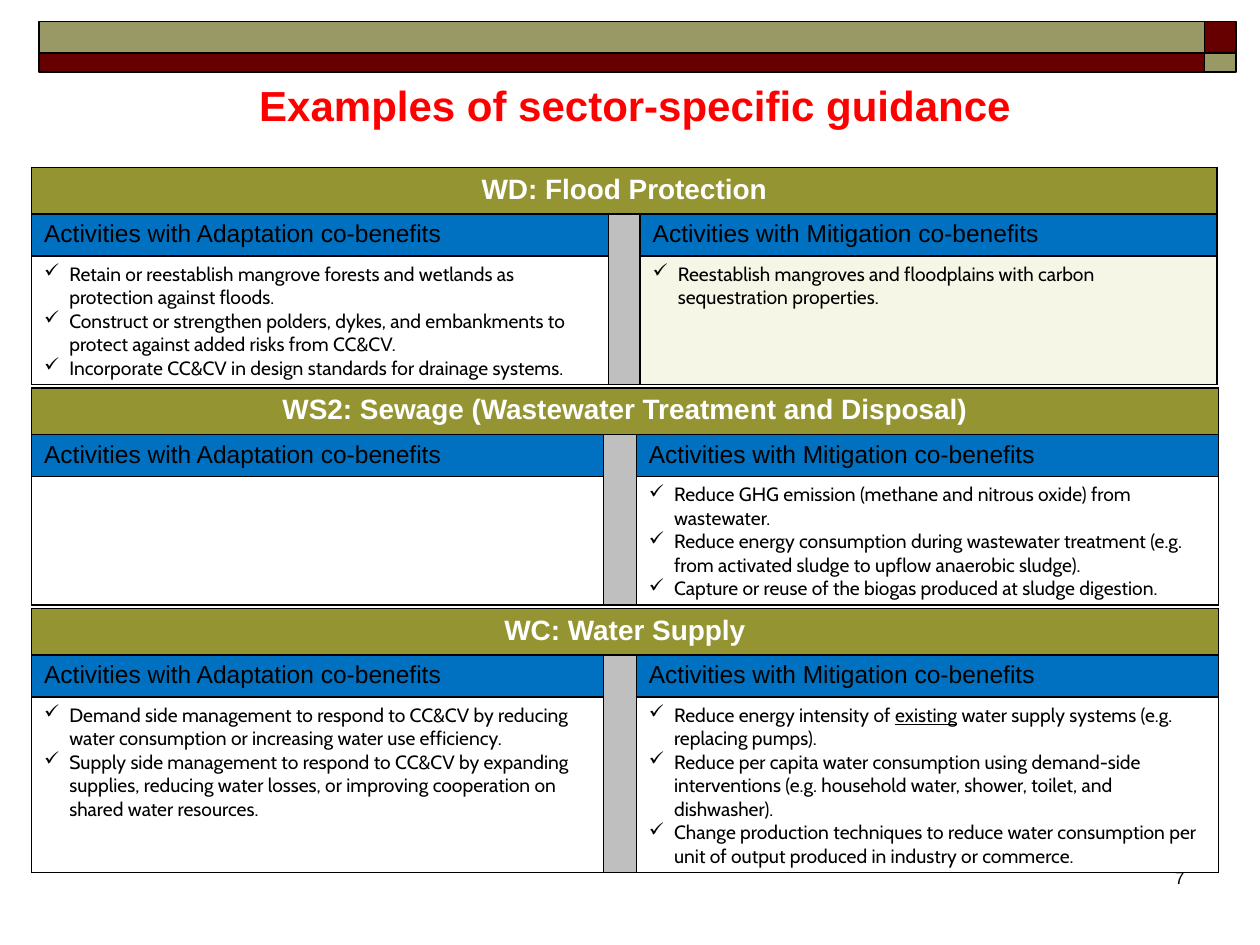
from lxml.etree import SubElement
from pptx import Presentation
from pptx.dml.color import RGBColor
from pptx.enum.shapes import MSO_SHAPE
from pptx.enum.text import MSO_ANCHOR, PP_ALIGN
from pptx.oxml.ns import qn
from pptx.util import Inches, Pt

COLORS = {
    "black": "000000", "white": "FFFFFF", "red": "FF0000", "maroon": "660000",
    "khaki": "999966", "olive": "949432", "blue": "0070C0", "gray": "BFBFBF",
    "cream": "F6F6E7",
}
HEADS = ("Activities with Adaptation co-benefits",
         "Activities with Mitigation co-benefits")
SECTORS = [
    {"title": "WD: Flood Protection", "top": 1.33, "body": 1.02,
     "cols": (4.58, 0.25, 4.58), "tint": "cream",
     "adapt": ["Retain or reestablish mangrove forests and wetlands as protection against floods.",
               "Construct or strengthen polders, dykes, and embankments to protect against added risks from CC&CV.",
               "Incorporate CC&CV in design standards for drainage systems."],
     "mitig": ["Reestablish mangroves and floodplains with carbon sequestration properties."]},
    {"title": "WS2: Sewage (Wastewater Treatment and Disposal)", "top": 3.08, "body": 1.02,
     "cols": (4.54, 0.26, 4.62), "tint": "white",
     "adapt": [],
     "mitig": ["Reduce GHG emission (methane and nitrous oxide) from wastewater.",
               "Reduce energy consumption during wastewater treatment (e.g. from activated sludge to upflow anaerobic sludge).",
               "Capture or reuse of the biogas produced at sludge digestion."]},
    {"title": "WC: Water Supply", "top": 4.83, "body": 1.39,
     "cols": (4.54, 0.26, 4.62), "tint": "white",
     "adapt": ["Demand side management to respond to CC&CV by reducing water consumption or increasing water use efficiency.",
               "Supply side management to respond to CC&CV by expanding supplies, reducing water losses, or improving cooperation on shared water resources."],
     "mitig": ["Reduce energy intensity of _existing_ water supply systems (e.g. replacing pumps).",
               "Reduce per capita water consumption using demand-side interventions (e.g. household water, shower, toilet, and dishwasher).",
               "Change production techniques to reduce water consumption per unit of output produced in industry or commerce."]},
]


def color(name):
    """Return the named colour."""
    return RGBColor.from_string(COLORS[name])


def write(para, text, size=14, font="Arial", tone="black", bold=False,
          align=PP_ALIGN.LEFT, bullet=None):
    """Write text into a paragraph, underlining what stands between underscores."""
    para.alignment = align
    for i, part in enumerate(text.split("_")):
        run = para.add_run()
        run.text = part
        run.font.size = Pt(size)
        run.font.name = font
        run.font.bold = bold
        run.font.underline = i % 2 == 1
        run.font.color.rgb = color(tone)
    if bullet:
        props = para._p.get_or_add_pPr()
        props.set("marL", str(Inches(0.2)))
        props.set("indent", str(Inches(-0.2)))
        SubElement(props, qn("a:buChar"), char=bullet)


class Deck:
    """Hold the style and the current slide."""

    def __init__(self):
        """Open a presentation with one title-only slide."""
        self.show = Presentation()
        self.show.slide_width, self.show.slide_height = Inches(10), Inches(7.5)
        self.slide = self.show.slides.add_slide(self.show.slide_layouts[5])

    def bar(self, left, top, width, height, fill):
        """Add an outlined rectangle."""
        bar = self.slide.shapes.add_shape(
            MSO_SHAPE.RECTANGLE, Inches(left), Inches(top), Inches(width), Inches(height))
        bar.shadow.inherit = False
        bar.fill.solid()
        bar.fill.fore_color.rgb = color(fill)
        bar.line.color.rgb = color("black")
        bar.line.width = Pt(1)

    def title(self, text):
        """Place and fill the title."""
        title = self.slide.shapes.title
        title.left, title.top = Inches(0.25), Inches(0.58)
        title.width, title.height = Inches(9.58), Inches(0.5)
        title.text_frame.vertical_anchor = MSO_ANCHOR.MIDDLE
        write(title.text_frame.paragraphs[0], text, size=24, tone="red",
              bold=True, align=PP_ALIGN.CENTER)

    def number(self, text):
        """Add the page number."""
        box = self.slide.shapes.add_textbox(
            Inches(7.42), Inches(6.83), Inches(2.08), Inches(0.5))
        box.text_frame.word_wrap = True
        write(box.text_frame.paragraphs[0], text, size=10, align=PP_ALIGN.RIGHT)

    def paint(self, cell, fill):
        """Give a cell its borders and fill."""
        props = cell._tc.get_or_add_tcPr()
        for side in ("a:lnL", "a:lnR", "a:lnT", "a:lnB"):
            line = SubElement(props, qn(side), w=str(Pt(1)))
            solid = SubElement(line, qn("a:solidFill"))
            SubElement(solid, qn("a:srgbClr"), val=COLORS["black"])
        cell.fill.solid()
        cell.fill.fore_color.rgb = color(fill)

    def table(self, title, top, body, cols, tint, adapt, mitig):
        """Add the table of one sector."""
        rows = (0.37, 0.33, body)
        grid = self.slide.shapes.add_table(
            3, 3, Inches(0.25), Inches(top), Inches(sum(cols)), Inches(sum(rows))).table
        grid.first_row = grid.horz_banding = False
        for col, width in zip(grid.columns, cols):
            col.width = Inches(width)
        for row, height in zip(grid.rows, rows):
            row.height = Inches(height)
        fills = (("olive",) * 3, ("blue", "gray", "blue"), ("white", "gray", tint))
        for r, names in enumerate(fills):
            for c, name in enumerate(names):
                self.paint(grid.cell(r, c), name)
        grid.cell(0, 0).merge(grid.cell(0, 2))
        gap = grid.cell(1, 1)
        gap.merge(grid.cell(2, 1))
        gap.margin_top = gap.margin_bottom = 0
        write(grid.cell(0, 0).text_frame.paragraphs[0], title, size=16,
              tone="white", bold=True, align=PP_ALIGN.CENTER)
        for c, head, items in zip((0, 2), HEADS, (adapt, mitig)):
            write(grid.cell(1, c).text_frame.paragraphs[0], head)
            frame = grid.cell(2, c).text_frame
            for i, item in enumerate(items):
                para = frame.add_paragraph() if i else frame.paragraphs[0]
                write(para, item, size=11, font="Cabin", bullet="✓")


def main():
    """Build and save the slide."""
    deck = Deck()
    for top, height, wide, small in ((0.17, 0.25, "khaki", "maroon"),
                                     (0.42, 0.15, "maroon", "khaki")):
        deck.bar(0.31, top, 9.25, height, wide)
        deck.bar(9.56, top, 0.25, height, small)
    deck.number("7")
    deck.title("Examples of sector-specific guidance")
    for sector in SECTORS:
        deck.table(**sector)
    deck.show.save("out.pptx")


if __name__ == "__main__":
    main()
